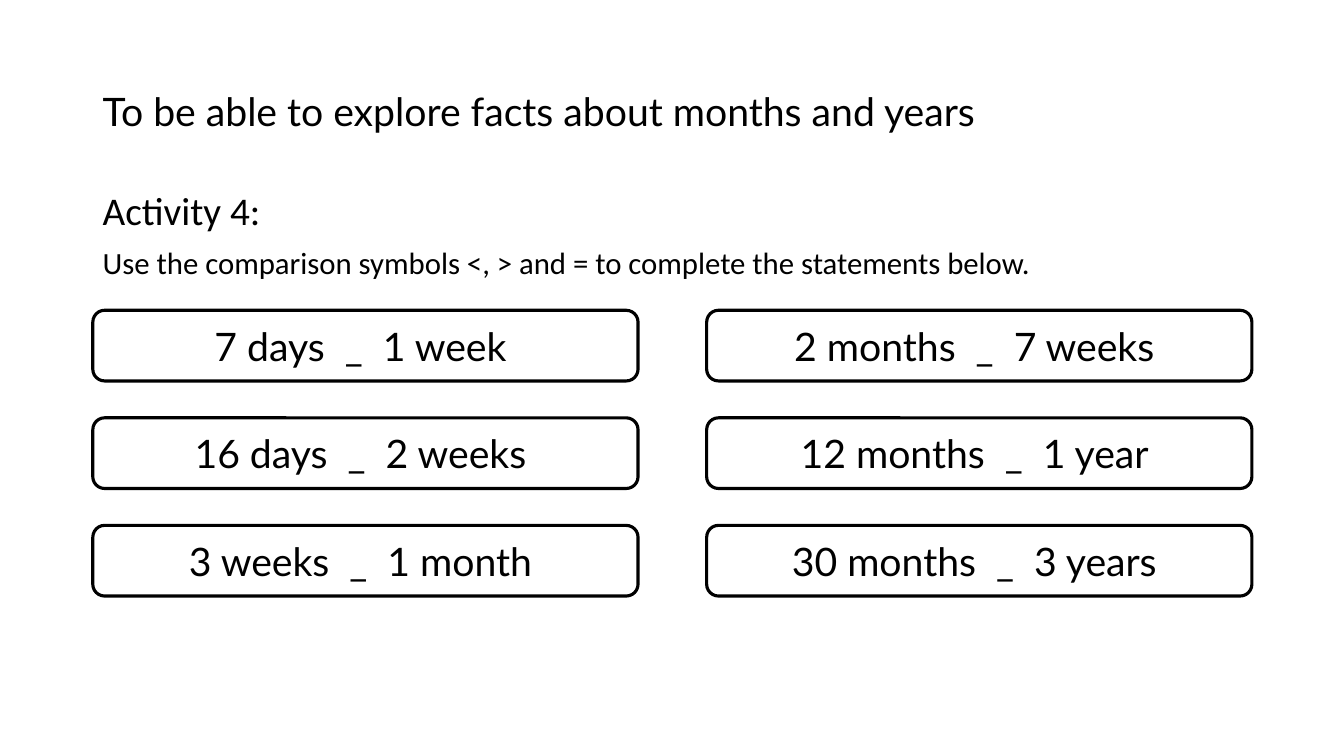
"""Build the activity slide on comparing days, weeks, months and years."""
from pptx import Presentation
from pptx import util as u
from pptx.dml.color import RGBColor
from pptx.enum import shapes, text

COLOURS = {"ink": "000000", "paper": "FFFFFF"}
INK = RGBColor.from_string(COLOURS["ink"])
PAPER = RGBColor.from_string(COLOURS["paper"])
LEFT = 2.34

HEADINGS = [
    (1.02, 24.38, 3.68, text.MSO_ANCHOR.MIDDLE, "Lato",
     [("To be able to explore facts about months and years", 28, 0)]),
    (4.7, 29.21, 2.9, text.MSO_ANCHOR.TOP, "Calibri",
     [("Activity 4:", 28, 0),
      ("Use the comparison symbols <, > and = to complete the statements below.", 22, 10)]),
]
STATEMENTS = [
    ["7 days  _  1 week ", "16 days  _  2 weeks ", "3 weeks  _  1 month "],
    ["2 months  _  7 weeks ", "12 months  _  1 year ", "30 months  _  3 years "],
]


def write(paragraph, wording, font, size):
    """Put styled wording in a paragraph."""
    run = paragraph.add_run()
    run.text = wording
    for name, value in {"name": font, "size": u.Pt(size)}.items():
        setattr(run.font, name, value)
    run.font.color.rgb = INK


deck = Presentation()
deck.slide_width, deck.slide_height = u.Cm(33.87), u.Cm(19.05)
activity = deck.slides.add_slide(deck.slide_layouts[6])

for top, width, height, anchor, font, lines in HEADINGS:
    heading = activity.shapes.add_textbox(
        u.Cm(LEFT), u.Cm(top), u.Cm(width), u.Cm(height)).text_frame
    for name, value in {"word_wrap": True, "vertical_anchor": anchor}.items():
        setattr(heading, name, value)
    for index, (wording, size, gap) in enumerate(lines):
        line = heading.add_paragraph() if index else heading.paragraphs[0]
        for name, value in {"line_spacing": 0.9, "space_before": u.Pt(gap)}.items():
            setattr(line, name, value)
        write(line, wording, font, size)

for column, statements in enumerate(STATEMENTS):
    for row, statement in enumerate(statements):
        card = activity.shapes.add_shape(
            shapes.MSO_SHAPE.ROUNDED_RECTANGLE,
            u.Cm(LEFT + 15.47 * column), u.Cm(7.82 + 2.71 * row),
            u.Cm(13.74), u.Cm(1.78))
        card.shadow.inherit = False
        card.fill.solid()
        card.fill.fore_color.rgb = PAPER
        card.line.color.rgb = INK
        card.line.width = u.Pt(2.25)
        card.text_frame.vertical_anchor = text.MSO_ANCHOR.MIDDLE
        comparison = card.text_frame.paragraphs[0]
        comparison.alignment = text.PP_ALIGN.CENTER
        write(comparison, statement, "Lato", 28)

deck.save("out.pptx")
